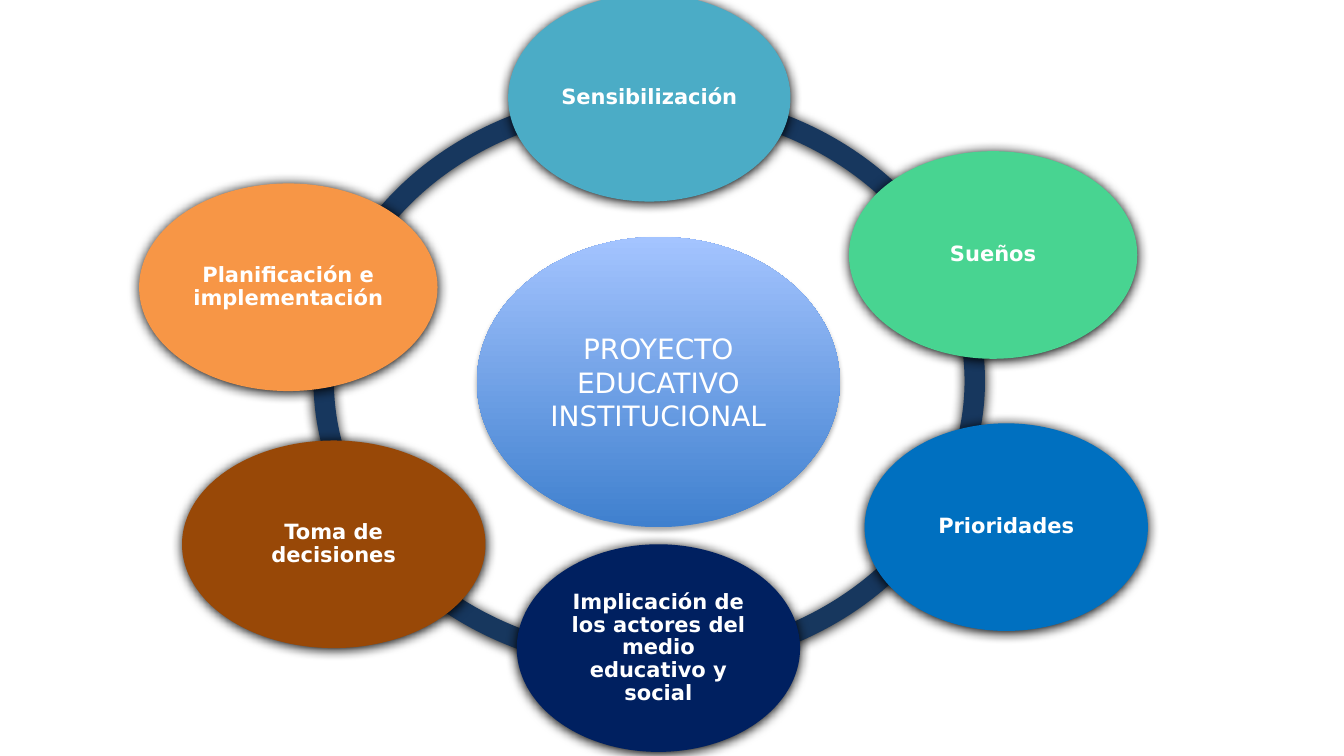
import pptx
import pptx.dml.color
import pptx.enum.shapes
import pptx.enum.text
import pptx.util
from lxml import etree

SHAPES = pptx.enum.shapes.MSO_SHAPE
FONT = "DejaVu Sans"
DRAWING = "http://schemas.openxmlformats.org/drawingml/2006/main"
CELL = 0.1  # side of a grid cell in inches
STAGE_HEIGHT = 20.6

# Text, fill, centre as columns and rows from the ring's centre, width in columns
STAGES = [
    ("Sensibilización", "4BACC6", 0, -28.1, 28),
    ("Sueños", "48D491", 34.1, -12.5, 28.6),
    ("Prioridades", "0070C0", 35.4, 14.5, 28.1),
    ("Implicación de los actores del medio educativo y social",
     "002060", 0.9, 26.5, 28.1),
    ("Toma de decisiones", "984807", -31.3, 16.2, 30.1),
    ("Planificación e implementación", "F79646", -35.8, -9.3, 29.6),
]


def color(value):
    return pptx.dml.color.RGBColor.from_string(value)


def grid(cells):
    return pptx.util.Inches(cells * CELL)


def add_shadow(shape, blur, distance, opacity):
    """Replace the theme's effects with a black shadow cast downwards."""
    shape.shadow.inherit = False
    effects = shape._element.spPr.find(f"{{{DRAWING}}}effectLst")
    shadow = etree.SubElement(
        effects, f"{{{DRAWING}}}outerShdw",
        blurRad=str(pptx.util.Pt(blur)), dist=str(pptx.util.Pt(distance)),
        dir="5400000", algn="ctr", rotWithShape="0")
    black = etree.SubElement(shadow, f"{{{DRAWING}}}srgbClr", val="000000")
    etree.SubElement(black, f"{{{DRAWING}}}alpha", val=str(opacity * 1000))


def add_centred(page, kind, centre, width, height, fill=None,
                blur=8.5, distance=1, opacity=100):
    column, row = centre
    shape = page.shapes.add_shape(
        kind, grid(column - width / 2), grid(row - height / 2),
        grid(width), grid(height))
    if fill:
        shape.fill.solid()
        shape.fill.fore_color.rgb = color(fill)
    shape.line.fill.background()
    add_shadow(shape, blur, distance, opacity)
    return shape


def write(shape, text, size, bold=False):
    frame = shape.text_frame
    frame.word_wrap = True
    frame.vertical_anchor = pptx.enum.text.MSO_ANCHOR.MIDDLE
    para = frame.paragraphs[0]
    para.text = text
    para.alignment = pptx.enum.text.PP_ALIGN.CENTER
    para.font.name = FONT
    para.font.size = pptx.util.Pt(size)
    para.font.bold = bold
    para.font.color.rgb = color("FFFFFF")
    return frame


def add_stage(page, centre, width, text, fill):
    oval = add_centred(page, SHAPES.OVAL, centre, width, STAGE_HEIGHT, fill)
    frame = write(oval, text, 15, bold=True)
    frame.paragraphs[0].line_spacing = 0.9
    frame.margin_left = frame.margin_right = grid(0.2)
    frame.margin_top = frame.margin_bottom = grid(0.2)


def add_core(page, centre):
    core = add_centred(page, SHAPES.OVAL, centre, 36, 28.8,
                       blur=3.5, distance=2.2, opacity=32)
    core.fill.gradient()
    core.fill.gradient_angle = 90
    for stop, value in zip(core.fill.gradient_stops, ("3F80CE", "A4C4FF")):
        stop.color.rgb = color(value)
    write(core, "PROYECTO EDUCATIVO INSTITUCIONAL", 20)


def add_cycle(page, box):
    left, top, width, height = box
    middle, centre_row = left + width / 2, top + height / 2
    # Ring behind the stages
    ring = add_centred(page, SHAPES.DONUT, (middle, centre_row),
                       width, height, "17375E")
    ring.adjustments[0] = 0.035
    # Central project
    add_core(page, (middle + 0.9, centre_row + 0.1))
    # Stages around the ring
    for text, fill, across, down, stage_width in STAGES:
        add_stage(page, (middle + across, centre_row + down),
                  stage_width, text, fill)


def main():
    deck = pptx.Presentation()
    deck.slide_width = pptx.util.Inches(13.33)
    deck.slide_height = pptx.util.Inches(7.5)
    page = deck.slides.add_slide(deck.slide_layouts[6])
    add_cycle(page, (31.1, 8.9, 66.6, 57.8))
    deck.save("out.pptx")


if __name__ == "__main__":
    main()
